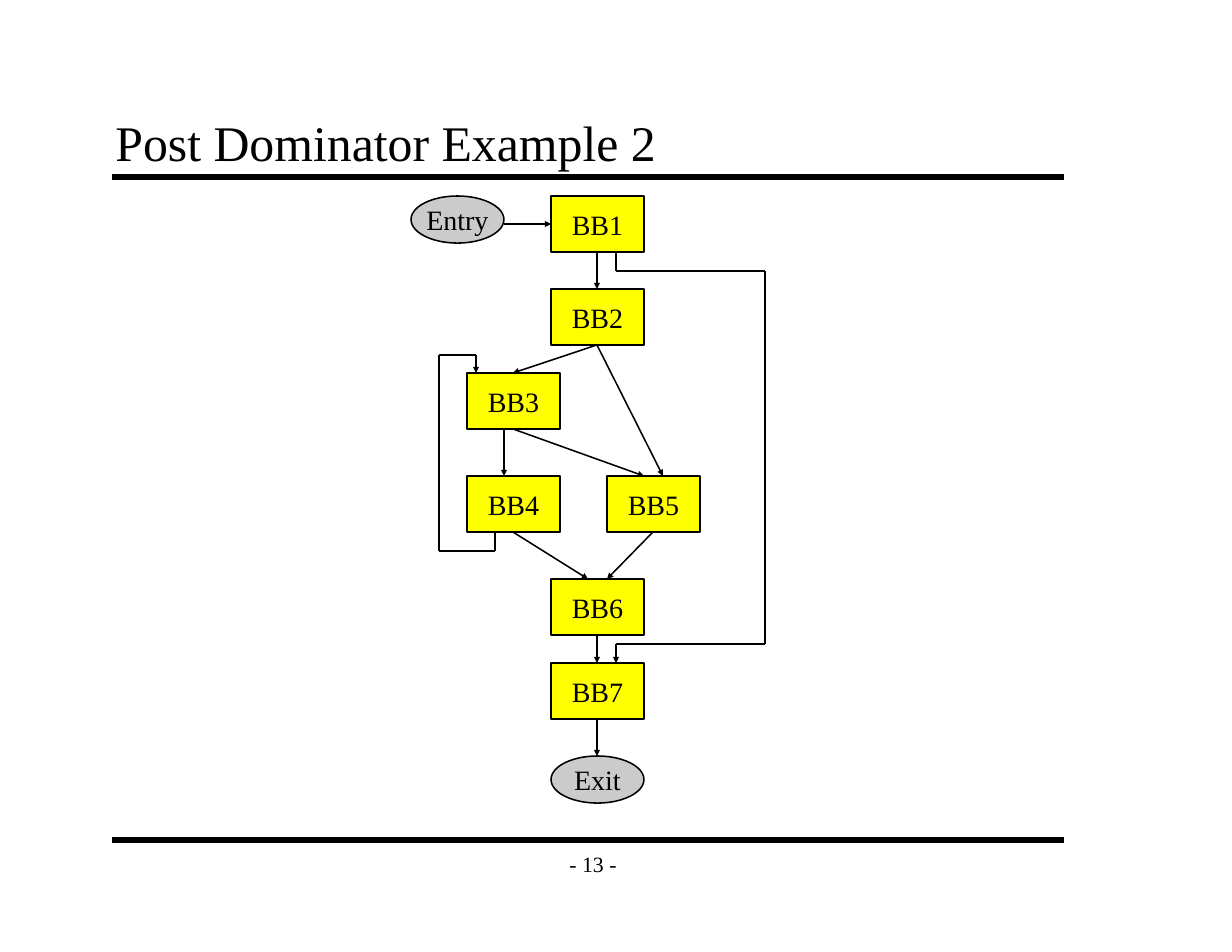
from itertools import pairwise

from lxml import etree
from pptx import Presentation
from pptx.dml.color import RGBColor
from pptx.enum.shapes import MSO_CONNECTOR, MSO_SHAPE
from pptx.enum.text import MSO_ANCHOR, MSO_AUTO_SIZE, PP_ALIGN
from pptx.oxml.ns import qn
from pptx.util import Inches, Pt

STRAIGHT = MSO_CONNECTOR.STRAIGHT
RECTANGLE, OVAL = MSO_SHAPE.RECTANGLE, MSO_SHAPE.OVAL
MIDDLE, BOTTOM = MSO_ANCHOR.MIDDLE, MSO_ANCHOR.BOTTOM
LEFT, CENTER = PP_ALIGN.LEFT, PP_ALIGN.CENTER
NO_FIT = MSO_AUTO_SIZE.NONE

NODE_WIDTH, BLOCK_HEIGHT, TERMINAL_HEIGHT = 0.83, 0.5, 0.42


def color(hex_string):
    return RGBColor.from_string(hex_string)


class FlowSlide:
    font = "Times New Roman"
    ink = "000000"
    block_fill = "FFFF00"
    terminal_fill = "CBCBCB"

    def __init__(self, page):
        self.page = page

    def set_text(self, shape, text, size, align=CENTER, anchor=MIDDLE, wrap=False):
        frame = shape.text_frame
        frame.text = text
        frame.word_wrap = wrap
        frame.auto_size = NO_FIT
        frame.vertical_anchor = anchor
        para = frame.paragraphs[0]
        para.alignment = align
        para.font.name = self.font
        para.font.size = Pt(size)
        para.font.color.rgb = color(self.ink)
        return frame

    def set_margins(self, frame):
        frame.margin_left = frame.margin_right = Inches(0.11)
        frame.margin_top = frame.margin_bottom = Inches(0.06)

    def title(self, text, left, top, width, height):
        box = self.page.shapes.title
        box.left, box.top = Inches(left), Inches(top)
        box.width, box.height = Inches(width), Inches(height)
        self.set_margins(self.set_text(box, text, 32, LEFT, BOTTOM, True))

    def label(self, text, left, top, width, height):
        box = self.page.shapes.add_textbox(
            Inches(left), Inches(top), Inches(width), Inches(height))
        self.set_margins(self.set_text(box, text, 14))

    def node(self, kind, text, left, top, height, fill):
        shape = self.page.shapes.add_shape(
            kind, Inches(left), Inches(top), Inches(NODE_WIDTH), Inches(height))
        shape.shadow.inherit = False
        shape.fill.solid()
        shape.fill.fore_color.rgb = color(fill)
        shape.line.color.rgb = color(self.ink)
        shape.line.width = Pt(1)
        self.set_text(shape, text, 18)

    def block(self, text, left, top):
        self.node(RECTANGLE, text, left, top, BLOCK_HEIGHT, self.block_fill)

    def terminal(self, text, left, top):
        self.node(OVAL, text, left, top, TERMINAL_HEIGHT, self.terminal_fill)

    def line(self, start, end, width=1, arrow=False):
        points = [Inches(value) for value in (*start, *end)]
        connector = self.page.shapes.add_connector(STRAIGHT, *points)
        connector.line.color.rgb = color(self.ink)
        connector.line.width = Pt(width)
        properties = connector._element.spPr
        if arrow:
            etree.SubElement(properties.find(qn("a:ln")), qn("a:tailEnd"),
                             type="triangle", w="sm", len="sm")
        etree.SubElement(properties, qn("a:effectLst"))

    def route(self, *points):
        """Join the points with lines; the last one carries the arrowhead."""
        segments = list(pairwise(points))
        for number, (start, end) in enumerate(segments, 1):
            self.line(start, end, arrow=number == len(segments))


def main():
    deck = Presentation()
    deck.slide_width, deck.slide_height = Inches(11), Inches(8.5)
    slide = FlowSlide(deck.slides.add_slide(deck.slide_layouts[5]))

    # Page frame
    for rule_y in (1.58, 7.5):
        slide.line((1, rule_y), (9.5, rule_y), width=4)
    slide.label("- 13 -", 4.92, 7.5, 0.75, 0.42)
    slide.title("Post Dominator Example 2", 0.92, 0.92, 8.5, 0.67)

    # Basic blocks, with the entry and exit
    middle, left, right = 4.92, 4.17, 5.42
    blocks = [(middle, 1.75), (middle, 2.58), (left, 3.33), (left, 4.25),
              (right, 4.25), (middle, 5.17), (middle, 5.92)]
    for number, (block_left, top) in enumerate(blocks, 1):
        slide.block(f"BB{number}", block_left, top)
    slide.terminal("Entry", 3.67, 1.75)
    slide.terminal("Exit", middle, 6.75)

    # Control flow edges
    slide.route((4.5, 2), (middle, 2))
    for start_y, end_y in ((2.25, 2.58), (5.67, 5.92), (6.42, 6.75)):
        slide.route((5.33, start_y), (5.33, end_y))
    slide.route((5.33, 3.08), (4.58, 3.33))
    slide.route((5.33, 3.08), (5.92, 4.25))
    slide.route((4.5, 3.83), (4.5, 4.25))
    slide.route((4.58, 3.83), (5.75, 4.25))
    slide.route((4.58, 4.75), (5.25, 5.17))
    slide.route((5.83, 4.75), (5.42, 5.17))

    # Bypass from BB1 to BB7, and the loop from BB4 back to BB3
    slide.route((5.5, 2.25), (5.5, 2.42), (6.83, 2.42),
                (6.83, 5.75), (5.5, 5.75), (5.5, 5.92))
    slide.route((4.42, 4.75), (4.42, 4.92), (3.92, 4.92),
                (3.92, 3.17), (4.25, 3.17), (4.25, 3.33))

    deck.save("out.pptx")


if __name__ == "__main__":
    main()
